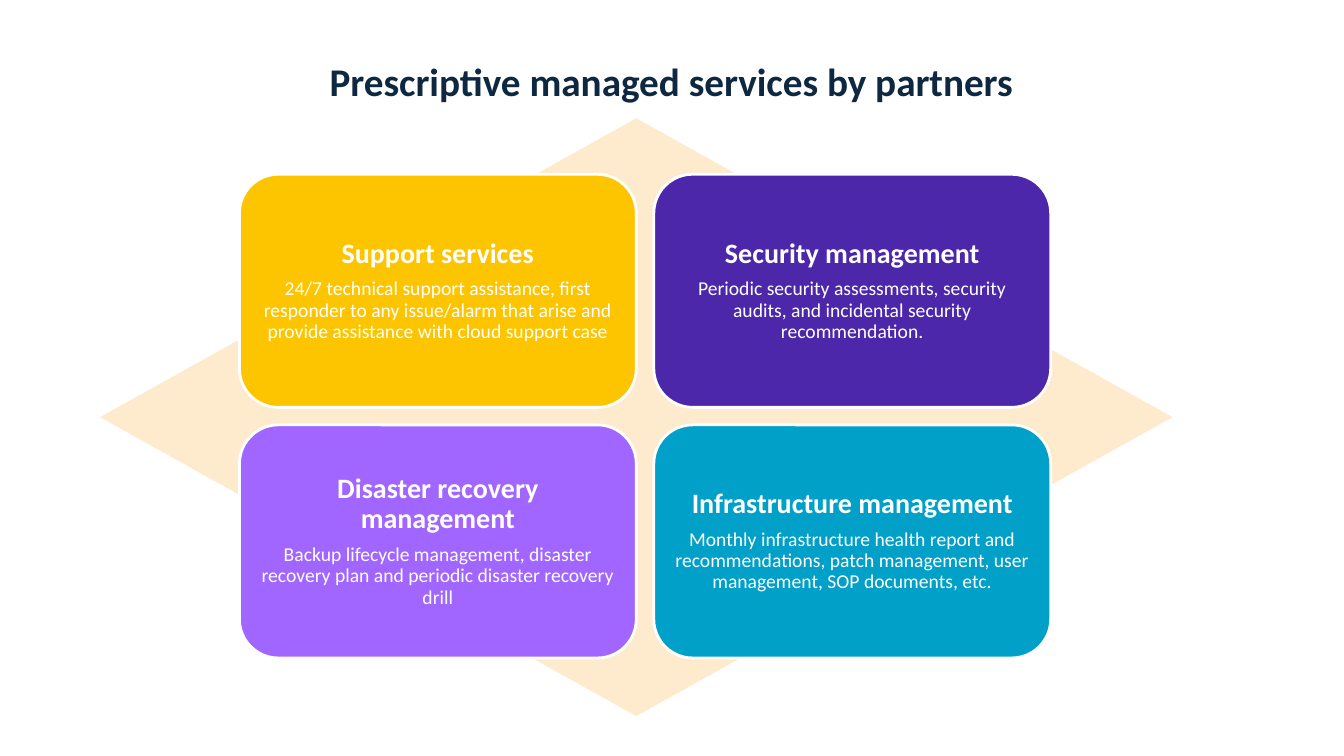
"""Build the managed services slide with four cards over a diamond."""
from pptx import Presentation
from pptx.dml.color import RGBColor
from pptx.enum.shapes import MSO_SHAPE as Shape
from pptx.enum.text import MSO_ANCHOR as Anchor, PP_ALIGN as Align
from pptx.util import Pt

TITLE = "Prescriptive managed services by partners"
SERVICES = [
    ("Support services",
     "24/7 technical support assistance, first responder to any issue/alarm "
     "that arise and provide assistance with cloud support case", "yellow"),
    ("Security management",
     "Periodic security assessments, security audits, and incidental security "
     "recommendation.", "indigo"),
    ("Disaster recovery management",
     "Backup lifecycle management, disaster recovery plan and periodic "
     "disaster recovery drill", "violet"),
    ("Infrastructure management",
     "Monthly infrastructure health report and recommendations, patch "
     "management, user management, SOP documents, etc.", "teal"),
]
COLORS = {"navy": "0E2841", "cream": "FEEACC", "white": "FFFFFF",
          "yellow": "FDC500", "indigo": "4D27AA", "violet": "A166FF",
          "teal": "00A0C8"}
FONT = "Calibri"
COLUMNS = 2
GRID_LEFT, GRID_TOP = 171, 124.5
CARD_WIDTH, CARD_HEIGHT = 283.5, 166.5
GAP = 12.5
CARD_MARGIN = 4.8


def color(name):
    return RGBColor.from_string(COLORS[name])


def write(paragraph, text, size, ink, bold=False):
    paragraph.alignment = Align.CENTER
    run = paragraph.add_run()
    run.text = text
    run.font.name, run.font.size, run.font.bold = FONT, Pt(size), bold
    run.font.color.rgb = color(ink)


def add_filled(slide, preset, box, fill):
    filled = slide.shapes.add_shape(preset, *map(Pt, box))
    filled.shadow.inherit = False
    filled.fill.solid()
    filled.fill.fore_color.rgb = color(fill)
    return filled


def add_card(slide, index, heading, description, fill):
    row, column = divmod(index, COLUMNS)
    left = GRID_LEFT + column * (CARD_WIDTH + GAP)
    top = GRID_TOP + row * (CARD_HEIGHT + GAP)
    card = add_filled(slide, Shape.ROUNDED_RECTANGLE,
                      (left, top, CARD_WIDTH, CARD_HEIGHT), fill)
    card.adjustments[0] = 1 / 6
    card.line.color.rgb = color("white")
    card.line.width = Pt(2)
    frame = card.text_frame
    frame.word_wrap = True
    frame.vertical_anchor = Anchor.MIDDLE
    frame.margin_left = frame.margin_right = Pt(CARD_MARGIN)
    frame.margin_top = frame.margin_bottom = Pt(CARD_MARGIN)
    title, body = frame.paragraphs[0], frame.add_paragraph()
    write(title, heading, 20, "white", bold=True)
    write(body, description, 14, "white")
    title.line_spacing = body.line_spacing = 0.9
    title.space_after = Pt(7)


def main():
    deck = Presentation()
    deck.slide_width, deck.slide_height = Pt(960), Pt(540)
    slide = deck.slides.add_slide(deck.slide_layouts[6])
    headline = slide.shapes.add_textbox(Pt(39.5), Pt(37.5), Pt(880), Pt(75))
    headline.text_frame.word_wrap = True
    write(headline.text_frame.paragraphs[0], TITLE, 28, "navy", bold=True)
    diamond = add_filled(slide, Shape.DIAMOND, (71.5, 84.5, 766, 427), "cream")
    diamond.line.fill.background()
    for index, service in enumerate(SERVICES):
        add_card(slide, index, *service)
    deck.save("out.pptx")


if __name__ == "__main__":
    main()
